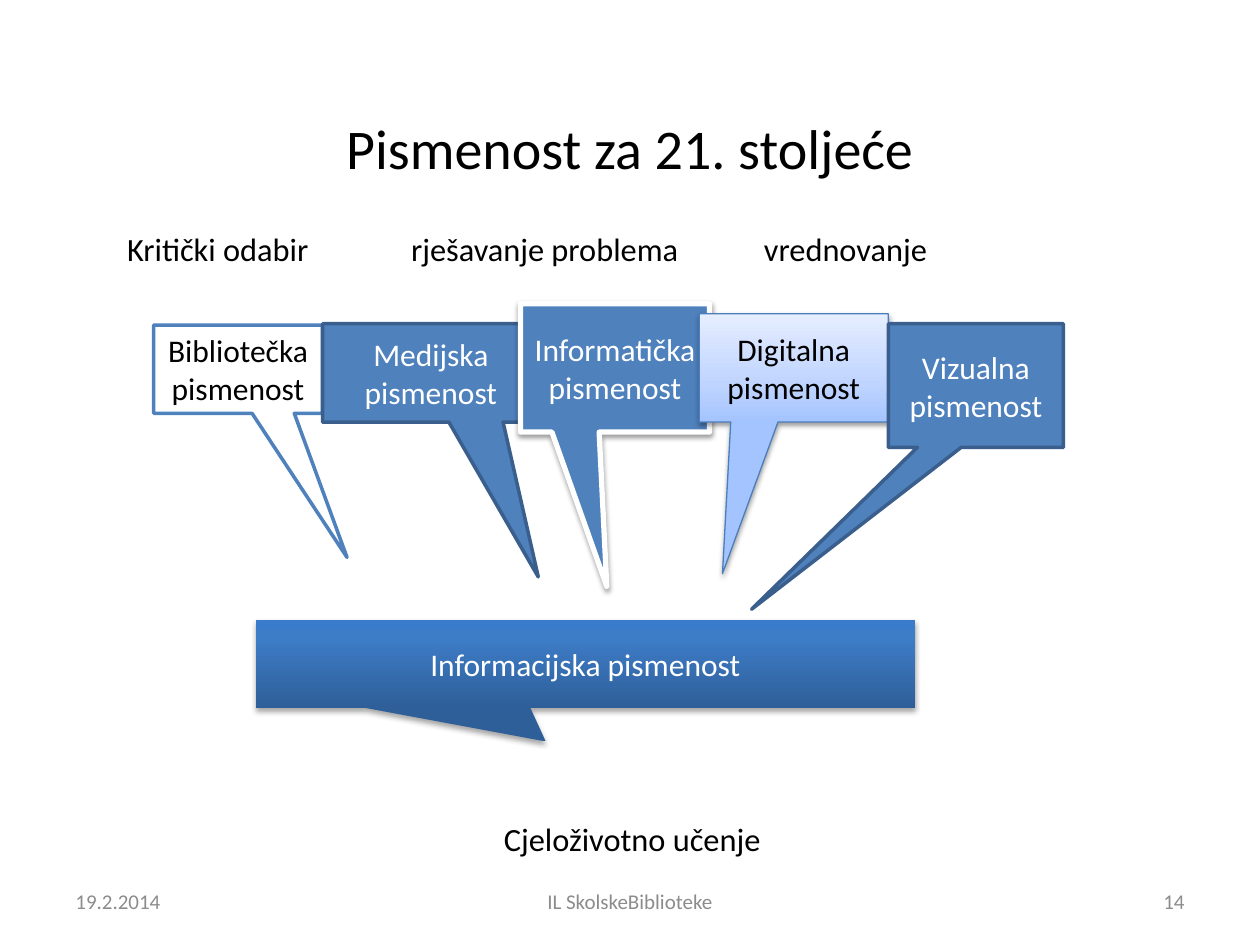
"""Build a slide on literacies for the 21st century."""
from dataclasses import dataclass

from lxml import etree
from pptx import Presentation
from pptx.dml.color import RGBColor
from pptx.enum.shapes import MSO_SHAPE
from pptx.enum.text import MSO_ANCHOR, PP_ALIGN
from pptx.oxml.ns import qn
from pptx.util import Pt

CALLOUT = MSO_SHAPE.RECTANGULAR_CALLOUT
MIDDLE = MSO_ANCHOR.MIDDLE
LEFT, CENTER, RIGHT = PP_ALIGN.LEFT, PP_ALIGN.CENTER, PP_ALIGN.RIGHT
BLACK, WHITE, GREY = "000000", "FFFFFF", "8C8C8C"
BLUE, NAVY = "4F81BD", "3A5F8C"
PALE = ((0, "A4C4FF"), (35, "BFD4FF"), (100, "E6EEFF"))
DEEP = ((0, "2F5F99"), (80, "3D7CC7"), (100, "3A7CCB"))


@dataclass
class Label:
    text: str
    box: tuple
    size: float = 18.5
    ink: str = BLACK
    align: PP_ALIGN = LEFT
    inset: float = 0


@dataclass
class Bubble:
    text: str
    box: tuple
    tip: tuple
    fill: str | tuple = BLUE
    line: str | None = NAVY
    width: float = 2
    ink: str = WHITE
    shade: tuple | None = None


LABELS = (
    Label("Kritički odabir", (72.6, 127, 110, 30)),
    Label("rješavanje problema", (234.9, 127, 160, 30)),
    Label("vrednovanje", (436.6, 127, 100, 30)),
    Label("Cjeloživotno učenje", (288, 464, 155, 30)),
    Label("19.2.2014", (36, 500.5, 168, 28.75), 12, GREY, LEFT, 7.2),
    Label("IL SkolskeBiblioteke", (246, 500.5, 228, 28.75), 12, GREY, CENTER, 7.2),
    Label("14", (516, 500.5, 168, 28.75), 12, GREY, RIGHT, 7.2),
)
BUBBLES = (
    Bubble("Bibliotečka\npismenost", (87.8, 185.8, 96.5, 50.4), (0.646, 2.134),
           WHITE, BLUE, ink=BLACK),
    Bubble("Medijska pismenost", (184.3, 185, 123.8, 56.2), (0.496, 2.074)),
    Bubble("Informatička pismenost", (297.4, 173.5, 108, 73.4), (-0.043, 1.702),
           line=WHITE, width=3, shade=(38, 1.6)),
    Bubble("Digitalna pismenost", (399.6, 179.3, 108, 61.9), (-0.377, 1.899),
           PALE, "4B7EBC", 0.75, BLACK, (38, 1.6)),
    Bubble("Informacijska pismenost", (146.2, 354.2, 376.6, 50.4), (-0.06, 0.88),
           DEEP, None, shade=(35, 1.8)),
    Bubble("Vizualna pismenost", (507.6, 185, 100.1, 70.6), (-1.281, 1.811)),
)


def tint(code: str) -> RGBColor:
    return RGBColor.from_string(code)


def put(item, **values) -> None:
    for name, value in values.items():
        setattr(item, name, value)


def write(shape, text: str, size: float, ink: str, align: PP_ALIGN,
          inset: float = 7.2, wrap: bool = True) -> None:
    frame = shape.text_frame
    frame.text = text
    put(frame, word_wrap=wrap, vertical_anchor=MIDDLE,
        margin_left=Pt(inset), margin_right=Pt(inset))
    for para in frame.paragraphs:
        para.alignment = align
        put(para.font, name="Calibri", size=Pt(size))
        para.font.color.rgb = tint(ink)


def blend(shape, stops: tuple) -> None:
    shape.fill.gradient()
    shape.fill.gradient_angle = 90
    ramp = shape.element.spPr.find(".//" + qn("a:gsLst"))
    for stop in list(ramp):
        ramp.remove(stop)
    for place, code in stops:
        stop = etree.SubElement(ramp, qn("a:gs"), pos=str(place * 1000))
        etree.SubElement(stop, qn("a:srgbClr"), val=code)


def cast(shape, alpha: int, drop: float) -> None:
    group = shape.element.spPr.find(qn("a:effectLst"))
    shadow = etree.SubElement(group, qn("a:outerShdw"), blurRad=str(Pt(3.1)),
                              dist=str(Pt(drop)), dir="5400000", rotWithShape="0")
    ink = etree.SubElement(shadow, qn("a:srgbClr"), val=BLACK)
    etree.SubElement(ink, qn("a:alpha"), val=str(alpha * 1000))


def add_label(slide, label: Label) -> None:
    shape = slide.shapes.add_textbox(*map(Pt, label.box))
    write(shape, label.text, label.size, label.ink, label.align, label.inset)


def add_bubble(slide, bubble: Bubble) -> None:
    shape = slide.shapes.add_shape(CALLOUT, *map(Pt, bubble.box))
    for spot, value in enumerate(bubble.tip):
        shape.adjustments[spot] = value
    if isinstance(bubble.fill, tuple):
        blend(shape, bubble.fill)
    else:
        shape.fill.solid()
        shape.fill.fore_color.rgb = tint(bubble.fill)
    if bubble.line:
        shape.line.color.rgb = tint(bubble.line)
        shape.line.width = Pt(bubble.width)
    else:
        shape.line.fill.background()
    shape.shadow.inherit = False
    if bubble.shade:
        cast(shape, *bubble.shade)
    write(shape, bubble.text, 18, bubble.ink, CENTER)


def main() -> None:
    deck = Presentation()
    put(deck, slide_width=Pt(720), slide_height=Pt(540))
    slide = deck.slides.add_slide(deck.slide_layouts[5])
    title = slide.shapes.title
    put(title, left=Pt(36), top=Pt(44.6), width=Pt(648), height=Pt(78.5))
    write(title, "Pismenost za 21. stoljeće", 32, BLACK, CENTER)
    for label in LABELS:
        add_label(slide, label)
    for bubble in BUBBLES:
        add_bubble(slide, bubble)
    deck.save("out.pptx")


if __name__ == "__main__":
    main()
